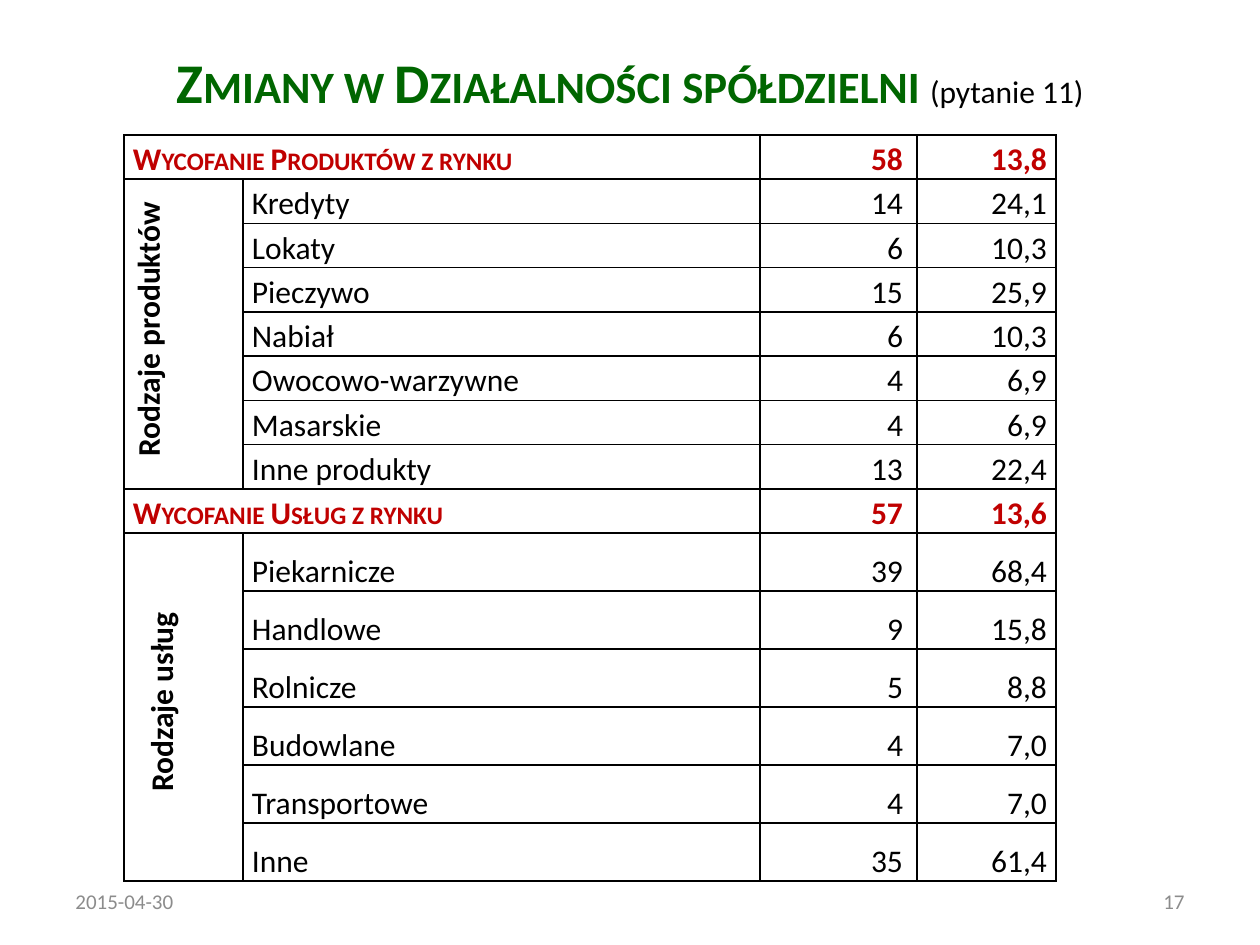
"""Builds a slide with a table of products and services withdrawn by cooperatives."""
from lxml import etree
from pptx import Presentation
from pptx import util as u
from pptx.dml.color import RGBColor
from pptx.enum import text
from pptx.oxml import ns

COLORS = {"title": "006600", "heading": "C00000", "body": "000000", "footer": "8C8C8C"}
LEFT, CENTER, RIGHT = text.PP_ALIGN.LEFT, text.PP_ALIGN.CENTER, text.PP_ALIGN.RIGHT
MIDDLE = text.MSO_ANCHOR.MIDDLE
COLUMNS = [119, 517, 157, 139]
PAD, COUNT_PAD = 9, 14
GROUPS = [
    (("Wycofanie Produktów z rynku", "58", "13,8"), "Rodzaje produktów", 44, 1.15, [
        ("Kredyty", "14", "24,1"),
        ("Lokaty", "6", "10,3"),
        ("Pieczywo", "15", "25,9"),
        ("Nabiał", "6", "10,3"),
        ("Owocowo-warzywne", "4", "6,9"),
        ("Masarskie", "4", "6,9"),
        ("Inne produkty", "13", "22,4"),
    ]),
    (("Wycofanie Usług z rynku", "57", "13,6"), "Rodzaje usług", 58, 1.5, [
        ("Piekarnicze", "39", "68,4"),
        ("Handlowe", "9", "15,8"),
        ("Rolnicze", "5", "8,8"),
        ("Budowlane", "4", "7,0"),
        ("Transportowe", "4", "7,0"),
        ("Inne", "35", "61,4"),
    ]),
]
HEADING_HEIGHT, HEADING_SPACING = 44, 1.15


def px(length):
    return u.Emu(round(length * 914400 / 126))


def apply(target, values):
    for name, value in values.items():
        setattr(target, name, value)


class Slide:
    """Holds the style and the current slide."""

    def __init__(self, deck, font="Calibri"):
        self.page = deck.slides.add_slide(deck.slide_layouts[5])
        self.font = font

    def span(self, para, words, size, color, bold=False, small=False):
        span = para.add_run()
        span.text = words
        apply(span.font, {"name": self.font, "size": u.Pt(size), "bold": bold})
        span.font.color.rgb = RGBColor.from_string(COLORS[color])
        if small:
            span._r.get_or_add_rPr().set("cap", "small")

    def title(self, place, spans):
        box = self.page.shapes.title
        apply(box, dict(zip(("left", "top", "width", "height"), map(px, place))))
        apply(box.text_frame, {"vertical_anchor": MIDDLE, "word_wrap": True,
                               "auto_size": text.MSO_AUTO_SIZE.NONE})
        para = box.text_frame.paragraphs[0]
        para.alignment = CENTER
        for span in spans:
            self.span(para, **span)

    def label(self, place, words, align):
        box = self.page.shapes.add_textbox(*map(px, place))
        apply(box.text_frame, {"vertical_anchor": MIDDLE, "word_wrap": True})
        para = box.text_frame.paragraphs[0]
        para.alignment = align
        self.span(para, words, 12, "footer")

    def table(self, left, top, columns, heights):
        place = map(px, (left, top, sum(columns), sum(heights)))
        table = self.page.shapes.add_table(len(heights), len(columns), *place).table
        apply(table, {"first_row": False, "horz_banding": False})
        for column, width in zip(table.columns, columns):
            column.width = px(width)
        for row, height in zip(table.rows, heights):
            row.height = px(height)
        for cell in table.iter_cells():
            apply(cell, {"margin_left": px(PAD), "margin_right": px(PAD),
                         "margin_top": 0, "margin_bottom": 0})
            cell.fill.background()
            self.borders(cell)
        return table

    def borders(self, cell):
        props = cell._tc.get_or_add_tcPr()
        for index, side in enumerate(("lnL", "lnR", "lnT", "lnB")):
            line = etree.Element(ns.qn(f"a:{side}"), w=str(u.Pt(1)))
            fill = etree.SubElement(line, ns.qn("a:solidFill"))
            etree.SubElement(fill, ns.qn("a:srgbClr"), val=COLORS["body"])
            props.insert(index, line)

    def cell(self, cell, words, spacing, align=LEFT, color="body", **style):
        para = cell.text_frame.paragraphs[0]
        apply(para, {"alignment": align, "line_spacing": spacing})
        self.span(para, words, 18, color, **style)

    def numbers(self, table, row, values, spacing, **style):
        table.cell(row, 2).margin_right = px(COUNT_PAD)
        for column, value in enumerate(values, 2):
            self.cell(table.cell(row, column), value, spacing, RIGHT, **style)

    def group(self, table, row, heading, kind, spacing, items):
        name, *values = heading
        style = {"color": "heading", "bold": True}
        table.cell(row, 0).merge(table.cell(row, 1))
        self.cell(table.cell(row, 0), name, HEADING_SPACING, small=True, **style)
        self.numbers(table, row, values, HEADING_SPACING, **style)

        side = table.cell(row + 1, 0)
        side.merge(table.cell(row + len(items), 0))
        side.vertical_anchor = MIDDLE
        side._tc.get_or_add_tcPr().set("vert", "vert270")
        self.cell(side, kind, spacing, CENTER, bold=True)
        side.text_frame.paragraphs[0]._p.get_or_add_pPr().set("marL", str(px(10)))

        for line, (name, *values) in enumerate(items, row + 1):
            self.cell(table.cell(line, 1), name, spacing)
            self.numbers(table, line, values, spacing)


def main():
    deck = Presentation()
    apply(deck, {"slide_width": px(1260), "slide_height": px(945)})
    slide = Slide(deck)
    slide.title((63, 38, 1134, 87), [
        {"words": "Zmiany w Działalności spółdzielni ", "size": 32, "color": "title",
         "bold": True, "small": True},
        {"words": "(pytanie 11)", "size": 18, "color": "body"},
    ])
    heights = []
    for _, _, height, _, items in GROUPS:
        heights += [HEADING_HEIGHT] + [height] * len(items)
    table = slide.table(124, 135, COLUMNS, heights)
    row = 0
    for heading, kind, _, spacing, items in GROUPS:
        slide.group(table, row, heading, kind, spacing, items)
        row += 1 + len(items)
    slide.label((63, 876, 294, 50), "2015-04-30", LEFT)
    slide.label((903, 876, 294, 50), "17", RIGHT)
    deck.save("out.pptx")


if __name__ == "__main__":
    main()
